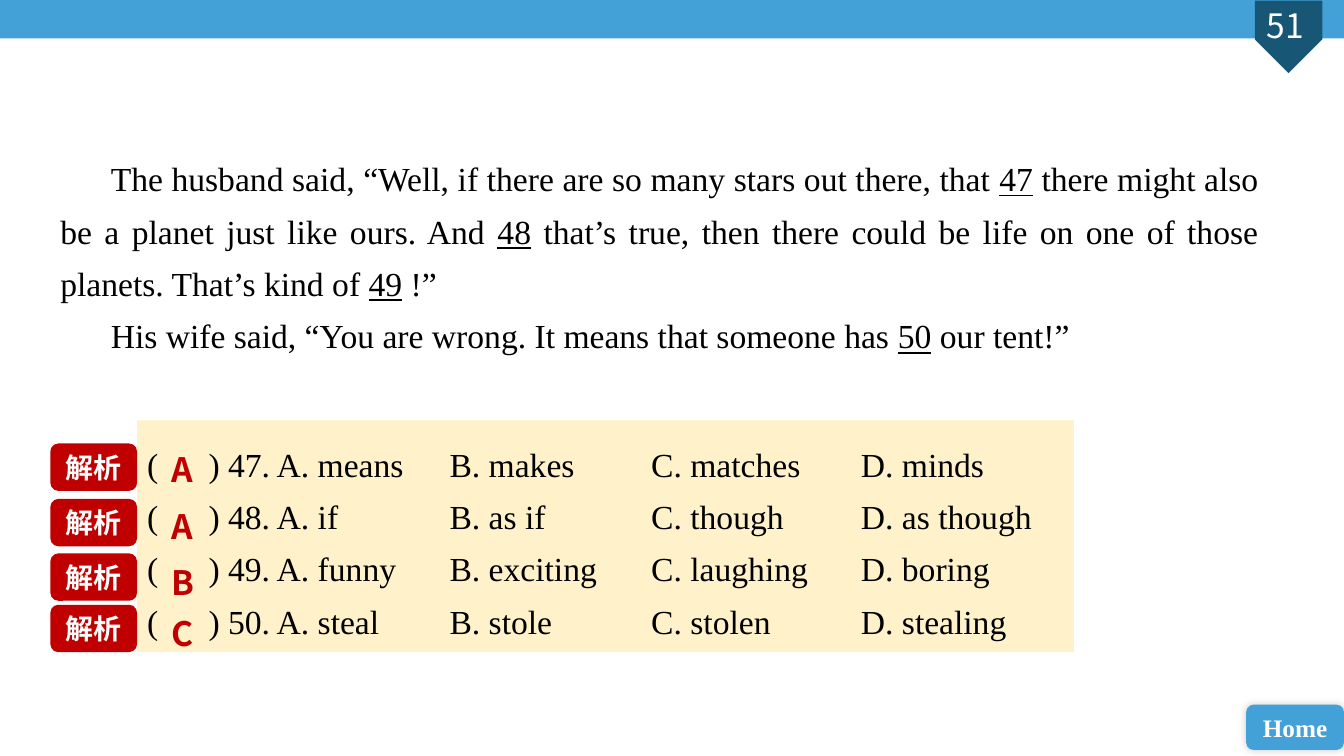
import pptx
import pptx.util
import pptx.dml.color
import pptx.enum.shapes
import pptx.enum.text
import pptx.oxml
import pptx.oxml.ns
from dataclasses import dataclass

Inches, Pt = pptx.util.Inches, pptx.util.Pt
Shape = pptx.enum.shapes.MSO_SHAPE
Align = pptx.enum.text.PP_ALIGN
Anchor = pptx.enum.text.MSO_ANCHOR
AutoSize = pptx.enum.text.MSO_AUTO_SIZE

# Content: underscores enclose the underlined blanks
PAGE, HOME, LABEL = "51", "Home", "解析"
STORY = [
    "The husband said, “Well, if there are so many stars out there, that _47_ there might also "
    "be a planet just like ours. And _48_ that’s true, then there could be life on one of those "
    "planets. That’s kind of _49_ !”",
    "His wife said, “You are wrong. It means that someone has _50_ our tent!”",
]
# number, choices, answer, top of answer, top of label
QUESTIONS = [
    (47, ["means", "makes", "matches", "minds"], "A", 4.4, 4.4),
    (48, ["if", "as if", "though", "as though"], "A", 4.97, 4.95),
    (49, ["funny", "exciting", "laughing", "boring"], "B", 5.53, 5.49),
    (50, ["steal", "stole", "stolen", "stealing"], "C", 6.03, 6),
]
TAB_STOPS = [0.61, 3, 5, 7.08]


@dataclass(frozen=True)
class Theme:
    blue: str = "43A1D8"
    navy: str = "185675"
    cream: str = "FFF2CA"
    red: str = "C00000"
    white: str = "FFFFFF"
    black: str = "000000"
    serif: str = "Times New Roman"
    sans: str = "Calibri"
    cjk: str = "Noto Sans CJK SC"
    body: int = 24
    label: int = 20
    button: int = 18


T = Theme()


def rgb(value):
    return pptx.dml.color.RGBColor.from_string(value)


def add_xml(parent, xml):
    ns = pptx.oxml.ns.nsdecls("a")
    parent.append(pptx.oxml.parse_xml(xml.replace(">", f" {ns}>", 1)))


def add_block(s, kind, box, color):
    sp = s.shapes.add_shape(kind, *map(Inches, box))
    sp.shadow.inherit = False
    sp.fill.solid()
    sp.fill.fore_color.rgb = rgb(color)
    sp.line.fill.background()
    return sp


def add_box(s, box, wrap=True):
    sp = s.shapes.add_textbox(*map(Inches, box))
    sp.text_frame.word_wrap = wrap
    sp.text_frame.auto_size = AutoSize.SHAPE_TO_FIT_TEXT
    return sp


def write(sp, *lines, size=T.body, font=T.serif, color=T.black, bold=False,
          align=Align.LEFT, spacing=None, indent=0, tabs=(), anchor=None):
    tf = sp.text_frame
    if anchor is not None:
        tf.vertical_anchor = anchor
    for i, line in enumerate(lines):
        p = tf.add_paragraph() if i else tf.paragraphs[0]
        p.alignment = align
        if spacing:
            p.line_spacing = spacing
        pPr = p._p.get_or_add_pPr()
        if indent:
            pPr.set("indent", str(Inches(indent)))
        if tabs:
            stops = "".join(f'<a:tab pos="{Inches(t)}" algn="l"/>' for t in tabs)
            add_xml(pPr, f"<a:tabLst>{stops}</a:tabLst>")
        for j, part in enumerate(line.split("_")):
            r = p.add_run()
            r.text = part
            r.font.size, r.font.name, r.font.bold = Pt(size), font, bold
            r.font.underline = j % 2 == 1
            r.font.color.rgb = rgb(color)
            add_xml(r._r.get_or_add_rPr(), f'<a:ea typeface="{T.cjk}"></a:ea>')


def build():
    prs = pptx.Presentation()
    prs.slide_width, prs.slide_height = Inches(13.33), Inches(7.5)
    s = prs.slides.add_slide(prs.slide_layouts[6])

    # Header bar and page marker
    add_block(s, Shape.RECTANGLE, (0, 0, 13.33, 0.38), T.blue)
    marker = add_block(s, Shape.PENTAGON, (12.42, 0.03, 0.72, 0.67), T.navy)
    marker.rotation = 90
    write(add_box(s, (12.26, 0, 0.98, 0.5)), PAGE,
          font=T.cjk, color=T.white, align=Align.CENTER)

    # Home button with a soft shadow
    home = add_block(s, Shape.ROUNDED_RECTANGLE, (12.36, 6.99, 0.97, 0.45), T.blue)
    effects = home._element.spPr.find(pptx.oxml.ns.qn("a:effectLst"))
    add_xml(effects, f'<a:outerShdw blurRad="{Pt(6)}" dist="0" dir="18900000">'
                     f'<a:srgbClr val="{T.black}"><a:alpha val="20000"/></a:srgbClr></a:outerShdw>')
    write(home, HOME, size=T.button, color=T.white, bold=True,
          align=Align.CENTER, anchor=Anchor.MIDDLE)

    # Story
    write(add_box(s, (0.5, 1.4, 12.08, 2.2)), *STORY,
          align=Align.JUSTIFY, spacing=1.3, indent=0.5)

    # Choices panel
    rows = []
    for number, choices, *_ in QUESTIONS:
        options = "\t".join(f"{k}. {c}" for k, c in zip("ABCD", choices))
        rows.append(f"(\t) {number}. {options}")
    panel = add_block(s, Shape.RECTANGLE, (1.36, 4.17, 9.29, 2.3), T.cream)
    write(panel, *rows, spacing=1.3, tabs=TAB_STOPS, anchor=Anchor.MIDDLE)

    # Answers and explanation labels
    for _, _, answer, answer_top, label_top in QUESTIONS:
        write(add_box(s, (1.6, answer_top, 0.45, 0.5), wrap=False), answer,
              font=T.cjk, color=T.red, bold=True)
        label = add_block(s, Shape.ROUNDED_RECTANGLE, (0.5, label_top, 0.86, 0.47), T.red)
        write(label, LABEL, size=T.label, font=T.sans, color=T.white, bold=True,
              align=Align.CENTER, anchor=Anchor.MIDDLE)

    prs.save("out.pptx")


if __name__ == "__main__":
    build()
